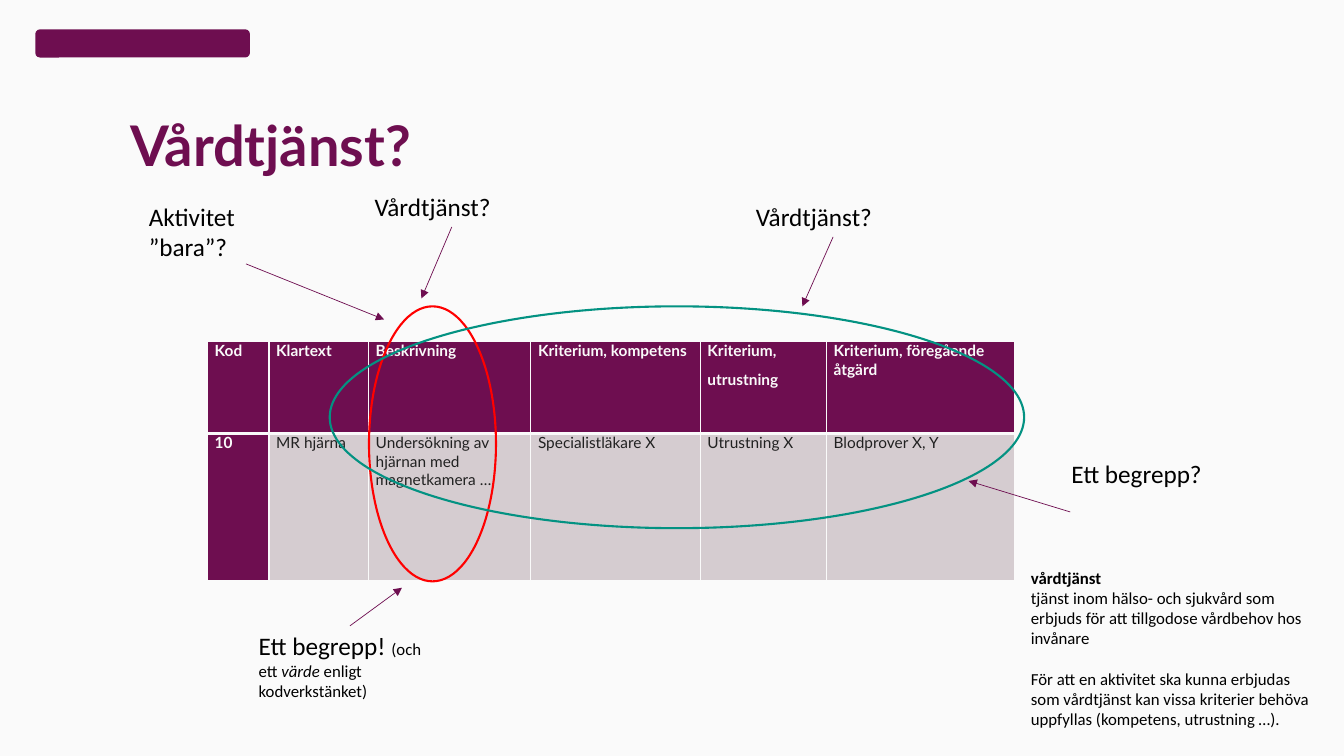
"""Build the slide that asks what counts as a "Vårdtjänst" in a code table."""
from lxml.etree import SubElement
from pptx import Presentation
from pptx.dml.color import RGBColor
from pptx.enum.shapes import MSO_CONNECTOR as Connector, MSO_SHAPE as Shape
from pptx.oxml.ns import qn
from pptx.util import Cm, Pt

PLUM = RGBColor(0x6E, 0x0E, 0x50)
PAPER = RGBColor(0xFA, 0xFA, 0xFA)
ROSE_GREY = RGBColor(0xD5, 0xCC, 0xD0)
INK = RGBColor(0x21, 0x21, 0x21)
BLACK = RGBColor(0, 0, 0)
RED = RGBColor(0xFF, 0, 0)
TEAL = RGBColor(0x03, 0x92, 0x82)


def add_span(para, text, size, font="Calibri", color=BLACK, bold=False, italic=False):
    span = para.add_run()
    span.text = text
    span.font.name, span.font.size = font, Pt(size)
    span.font.bold, span.font.italic = bold, italic
    span.font.color.rgb = color


def add_box(left, top, width, height):
    box = slide.shapes.add_textbox(Cm(left), Cm(top), Cm(width), Cm(height))
    box.text_frame.word_wrap = True
    return box


deck = Presentation()
deck.slide_width, deck.slide_height = Cm(33.87), Cm(19.05)
slide = deck.slides.add_slide(deck.slide_layouts[6])
slide.background.fill.solid()
slide.background.fill.fore_color.rgb = PAPER

emblem = slide.shapes.add_shape(Shape.ROUNDED_RECTANGLE, Cm(0.89), Cm(0.74), Cm(5.41), Cm(0.71))
emblem.shadow.inherit = False
emblem.fill.solid()
emblem.fill.fore_color.rgb = PLUM
emblem.line.fill.background()

title = add_box(3.28, 2.97, 22.35, 1.55)
frame = title.text_frame
frame.margin_left = frame.margin_top = frame.margin_right = frame.margin_bottom = 0
frame.paragraphs[0].line_spacing = 0.9
add_span(frame.paragraphs[0], "Vårdtjänst?", 40, "Lato", PLUM, bold=True)

COLUMN_WIDTHS = [1.55, 2.51, 4.09, 4.27, 3.18, 4.75]
ROW_HEIGHTS = [2.31, 3.71]
CODE_ROWS = [
    ["Kod", "Klartext", "Beskrivning", "Kriterium, kompetens",
     "Kriterium,\nutrustning", "Kriterium, föregående åtgärd"],
    ["10", "MR hjärna", "Undersökning av hjärnan med magnetkamera …",
     "Specialistläkare X", "Utrustning X", "Blodprover X, Y"],
]
table = slide.shapes.add_table(2, 6, Cm(5.23), Cm(8.61), Cm(sum(COLUMN_WIDTHS)),
                               Cm(sum(ROW_HEIGHTS))).table
for column, width in zip(table.columns, COLUMN_WIDTHS):
    column.width = Cm(width)
for row_index, texts in enumerate(CODE_ROWS):
    table.rows[row_index].height = Cm(ROW_HEIGHTS[row_index])
    for column_index, text in enumerate(texts):
        cell = table.cell(row_index, column_index)
        heading = row_index == 0 or column_index == 0
        cell.margin_left = cell.margin_right = Cm(0.18)
        cell.margin_top = cell.margin_bottom = 0
        cell_properties = cell._tc.get_or_add_tcPr()
        for side in ("lnL", "lnR", "lnT", "lnB"):
            thick = side == ("lnB", "lnT")[row_index]
            border = SubElement(cell_properties, qn(f"a:{side}"), w=str(Pt(3 if thick else 1)))
            border_fill = SubElement(border, qn("a:solidFill"))
            SubElement(border_fill, qn("a:srgbClr"), val=str(PAPER))
        cell.fill.solid()
        cell.fill.fore_color.rgb = PLUM if heading else ROSE_GREY
        for line_index, line_text in enumerate(text.split("\n")):
            frame = cell.text_frame
            para = frame.add_paragraph() if line_index else frame.paragraphs[0]
            para.space_before, para.space_after = Pt(1), Pt(6)
            add_span(para, line_text, 11, "Lato", PAPER if heading else INK, bold=heading)

for left, width, height, color in [(9.3, 3.2, 6.93, RED), (8.31, 17.5, 5.59, TEAL)]:
    ring = slide.shapes.add_shape(Shape.OVAL, Cm(left), Cm(7.72), Cm(width), Cm(height))
    ring.shadow.inherit = False
    ring.fill.background()
    ring.line.color.rgb, ring.line.width = color, Pt(1.5)

LABELS = [
    ("Vårdtjänst?", (9.19, 4.7, 4.39, 1.02), (11.4, 5.77, 10.62, 7.52), 2),
    ("Vårdtjänst?", (18.8, 4.95, 4.39, 1.02), (21, 5.97, 20.22, 7.72), 2),
    ("Aktivitet ”bara”?", (3.5, 4.95, 4.39, 1.8), (6.2, 6.65, 9.68, 8.05), None),
    ("Ett begrepp?", (26.75, 11.43, 5.1, 1.02), (26.97, 12.9, 24.41, 12.12), None),
    ("Ett begrepp! ", (6.27, 15.77, 5.1, 2.06), (8.84, 15.77, 10.13, 14.81), 0),
]
for text, place, ends, side in LABELS:
    label = add_box(*place)
    add_span(label.text_frame.paragraphs[0], text, 18)
    arrow = slide.shapes.add_connector(Connector.STRAIGHT, *[Cm(end) for end in ends])
    if side is not None:
        arrow.begin_connect(label, side)
    arrow.line.color.rgb, arrow.line.width = PLUM, Pt(0.5)
    SubElement(arrow.line._get_or_add_ln(), qn("a:tailEnd"), type="triangle")
    SubElement(arrow._element.spPr, qn("a:effectLst"))

concept_para = label.text_frame.paragraphs[0]
add_span(concept_para, "(och ett ", 12)
add_span(concept_para, "värde", 12, italic=True)
add_span(concept_para, " enligt kodverkstänket)", 12)

definition = add_box(25.73, 14.17, 7.6, 4.37).text_frame
add_span(definition.paragraphs[0], "vårdtjänst", 12, bold=True)
add_span(definition.add_paragraph(), "tjänst inom hälso- och sjukvård som erbjuds för att "
         "tillgodose vårdbehov hos invånare", 12)
condition = definition.add_paragraph()
condition.space_before = Pt(14.6)
add_span(condition, "För att en aktivitet ska kunna erbjudas som vårdtjänst kan vissa "
         "kriterier behöva uppfyllas (kompetens, utrustning …).", 12)

deck.save("out.pptx")
